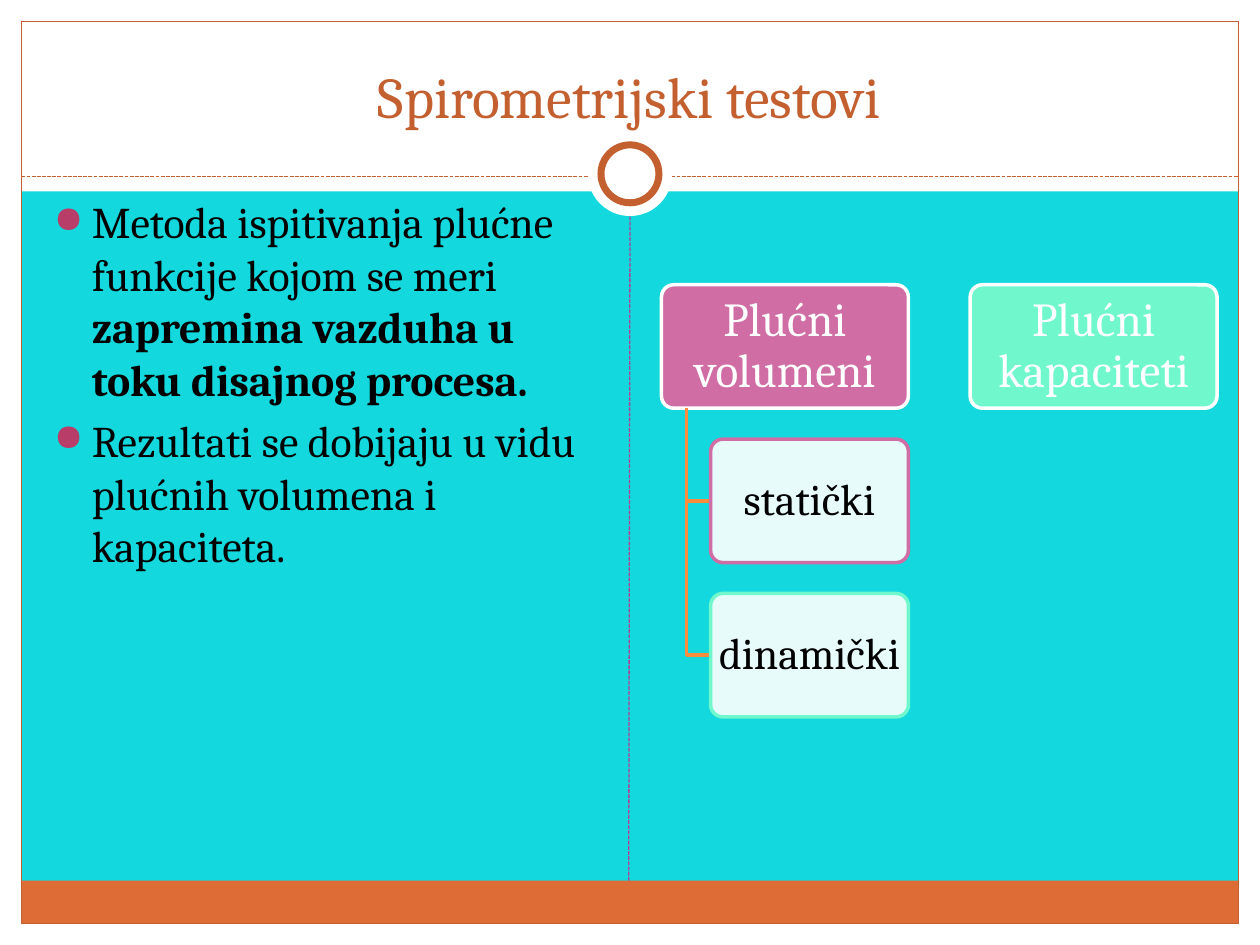
from lxml import etree
from pptx import Presentation
from pptx.dml.color import RGBColor
from pptx.enum import dml, shapes, text
from pptx.oxml.ns import qn
from pptx.util import Inches, Pt

TITLE = "Spirometrijski testovi"
BULLETS = [
    [("Metoda ispitivanja plućne funkcije kojom se meri ", False),
     ("zapremina vazduha u toku disajnog procesa.", True)],
    [("Rezultati se dobijaju u vidu plućnih volumena i kapaciteta.", False)],
]
GROUPS = [
    ("Plućni volumeni", "pink", [("statički", "pink"), ("dinamički", "mint")]),
    ("Plućni kapaciteti", "mint", []),
]
THEME = {
    "font": "Cambria",
    "sizes": {"title": 33, "body": 25, "parent": 27, "child": 25},
    "colors": {
        "background": "13D8DD", "white": "FFFFFF", "black": "000000",
        "rust": "C45F30", "orange": "DE6C36", "purple": "B13F9A",
        "bullet": "B83D68", "branch": "FA8D3D", "pink": "CF6DA4", "mint": "70F8CC",
    },
}
WIDTH, HEIGHT, MARGIN = 10, 7.5, 0.17
HEADER, FOOTER, DIVIDER = 1.52, 6.99, 1.4
RING_CENTER = (5, 1.38)
TREE_LEFT, TREE_TOP, TREE_STEP = 5.25, 2.26, 2.45
BOX_WIDTH, BOX_HEIGHT, ROW_STEP = 1.96, 0.98, 1.225
CHILD_INDENT, TRUNK_INDENT = 0.39, 0.2

presentation = Presentation()
presentation.slide_width, presentation.slide_height = Inches(WIDTH), Inches(HEIGHT)
slide = presentation.slides.add_slide(presentation.slide_layouts[6])


def color(name):
    return RGBColor.from_string(THEME["colors"][name])


def paint(shape, fill=None, line=None, weight=0.75):
    shape.shadow.inherit = False
    if fill:
        shape.fill.solid()
        shape.fill.fore_color.rgb = color(fill)
    else:
        shape.fill.background()
    if line:
        shape.line.color.rgb = color(line)
        shape.line.width = Pt(weight)
    else:
        shape.line.fill.background()


def add_box(kind, left, top, width, height, **style):
    shape = slide.shapes.add_shape(kind, *map(Inches, (left, top, width, height)))
    paint(shape, **style)
    return shape


def add_dashed_line(start, end, line):
    connector = slide.shapes.add_connector(
        shapes.MSO_CONNECTOR.STRAIGHT, *map(Inches, start + end))
    connector.line.color.rgb = color(line)
    connector.line.width = Pt(0.75)
    connector.line.dash_style = dml.MSO_LINE.SQUARE_DOT
    etree.SubElement(connector._element.spPr, qn("a:effectLst"))


def set_font(paragraph, role, name):
    paragraph.font.name = THEME["font"]
    paragraph.font.size = Pt(THEME["sizes"][role])
    paragraph.font.color.rgb = color(name)


def add_text_frame(left, top, width, height):
    frame = slide.shapes.add_textbox(*map(Inches, (left, top, width, height))).text_frame
    frame.word_wrap = True
    return frame


def add_bullet(paragraph):
    properties = paragraph._p.get_or_add_pPr()
    properties.set("marL", str(Inches(0.3)))
    properties.set("indent", str(-Inches(0.3)))
    bullet_color = etree.SubElement(properties, qn("a:buClr"))
    etree.SubElement(bullet_color, qn("a:srgbClr"), val=THEME["colors"]["bullet"])
    etree.SubElement(properties, qn("a:buSzPct"), val="85000")
    etree.SubElement(properties, qn("a:buChar"), char="●")


def add_node(label, left, top, width, role, font_color, **style):
    node = add_box(shapes.MSO_SHAPE.ROUNDED_RECTANGLE, left, top, width, BOX_HEIGHT,
                   weight=2, **style)
    node.adjustments[0] = 0.1
    frame = node.text_frame
    frame.word_wrap = True
    frame.vertical_anchor = text.MSO_ANCHOR.MIDDLE
    frame.margin_left = frame.margin_right = Inches(0.02)
    frame.margin_top = frame.margin_bottom = Inches(0.01)
    paragraph = frame.paragraphs[0]
    paragraph.text = label
    paragraph.alignment = text.PP_ALIGN.CENTER
    paragraph.line_spacing = 0.9
    set_font(paragraph, role, font_color)
    return node


def add_branch(left, top, right, bottom):
    builder = slide.shapes.build_freeform(Inches(left), Inches(top))
    builder.add_line_segments(
        [(Inches(left), Inches(bottom)), (Inches(right), Inches(bottom))], close=False)
    paint(builder.convert_to_shape(), line="branch", weight=2)


def add_frame():
    slide.background.fill.solid()
    slide.background.fill.fore_color.rgb = color("background")
    rectangle, oval = shapes.MSO_SHAPE.RECTANGLE, shapes.MSO_SHAPE.OVAL
    inner_width, inner_height = WIDTH - 2 * MARGIN, HEIGHT - 2 * MARGIN
    for area in [(0, HEIGHT - MARGIN, WIDTH, MARGIN), (0, 0, WIDTH, HEADER),
                 (0, 0, MARGIN, HEIGHT), (WIDTH - MARGIN, 0, MARGIN, HEIGHT)]:
        add_box(rectangle, *area, fill="white")
    add_box(rectangle, MARGIN, FOOTER, inner_width, HEIGHT - MARGIN - FOOTER, fill="orange")
    add_box(rectangle, MARGIN, MARGIN, inner_width, inner_height, line="rust")
    add_dashed_line((MARGIN, DIVIDER), (WIDTH - MARGIN, DIVIDER), "rust")
    x, y = RING_CENTER
    for size, line in [(0.67, None), (0.46, "rust")]:
        add_box(oval, x - size / 2, y - size / 2, size, size,
                fill="white", line=line, weight=4)
    add_dashed_line((4.99, FOOTER), (5, 1.72), "purple")


def add_title():
    frame = add_text_frame(0.33, 0.25, 9.33, 0.83)
    frame.vertical_anchor = text.MSO_ANCHOR.BOTTOM
    paragraph = frame.paragraphs[0]
    paragraph.text = TITLE
    paragraph.alignment = text.PP_ALIGN.CENTER
    set_font(paragraph, "title", "rust")


def add_body():
    frame = add_text_frame(0.33, 1.5, 4.42, 5.12)
    for index, runs in enumerate(BULLETS):
        paragraph = frame.add_paragraph() if index else frame.paragraphs[0]
        paragraph.space_before = Pt(5)
        add_bullet(paragraph)
        set_font(paragraph, "body", "black")
        for content, bold in runs:
            run = paragraph.add_run()
            run.text = content
            run.font.bold = bold


def add_tree():
    for column, (label, fill, children) in enumerate(GROUPS):
        left = TREE_LEFT + column * TREE_STEP
        add_node(label, left, TREE_TOP, BOX_WIDTH, "parent", "white",
                 fill=fill, line="white")
        child_left = left + CHILD_INDENT
        for row, (child, outline) in enumerate(children, 1):
            top = TREE_TOP + row * ROW_STEP
            add_branch(left + TRUNK_INDENT, TREE_TOP + BOX_HEIGHT,
                       child_left, top + BOX_HEIGHT / 2)
            node = add_node(child, child_left, top, BOX_WIDTH - CHILD_INDENT,
                            "child", "black", fill="white", line=outline)
            fill_color = node._element.spPr.find(qn("a:solidFill"))[0]
            etree.SubElement(fill_color, qn("a:alpha"), val="90000")


add_frame()
add_title()
add_body()
add_tree()
presentation.save("out.pptx")
